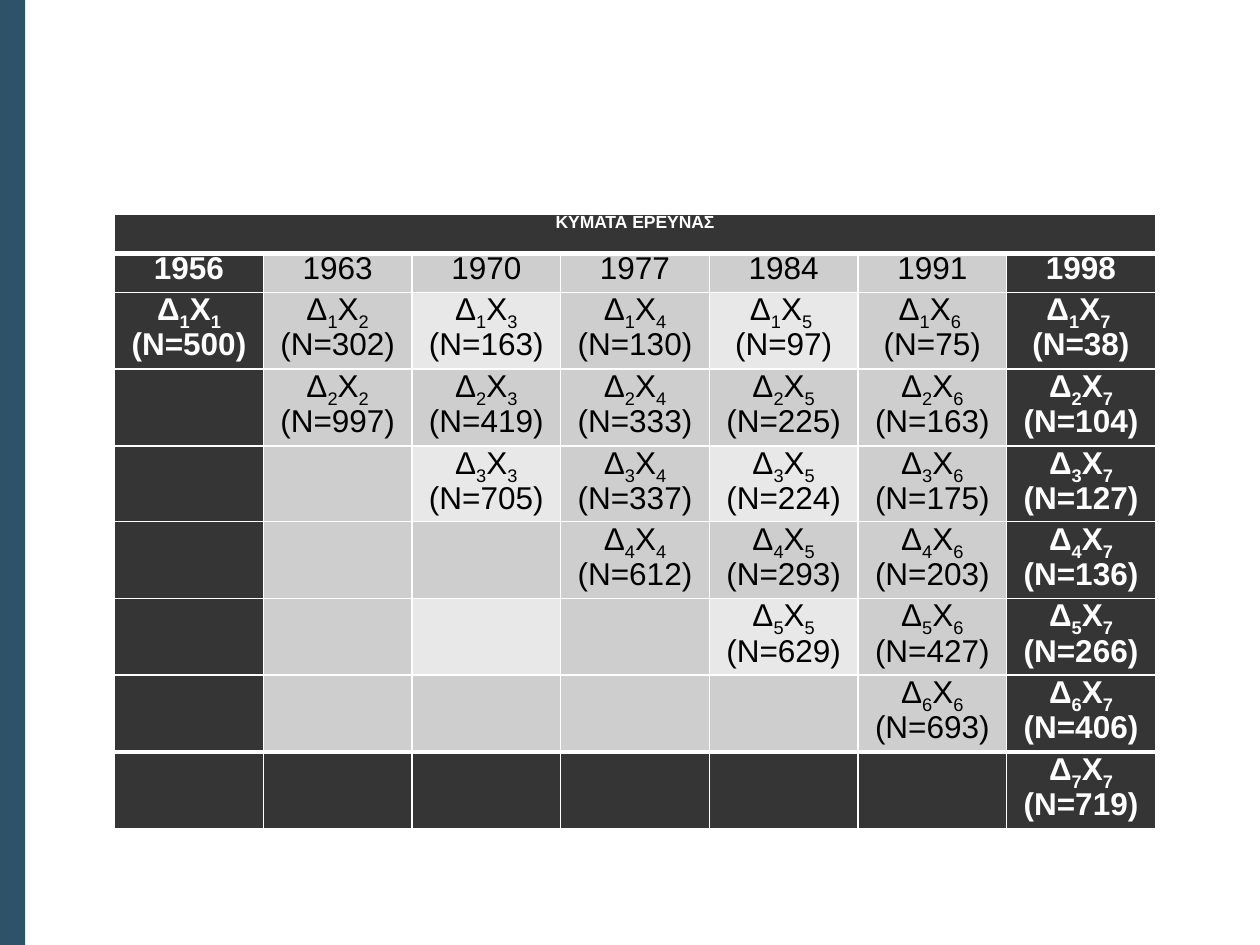
from lxml import etree
from pptx import Presentation
from pptx.dml import color
from pptx.enum import shapes, text
from pptx.oxml import ns
from pptx.util import Inches, Pt

DARK, MEDIUM, LIGHT = "353535", "CECECE", "E8E8E8"
YEARS = [1956, 1963, 1970, 1977, 1984, 1991, 1998]
# One row per sample Δ; sample n first appears in wave n
SAMPLE_SIZES = [
    [500, 302, 163, 130, 97, 75, 38],
    [997, 419, 333, 225, 163, 104],
    [705, 337, 224, 175, 127],
    [612, 293, 203, 136],
    [629, 427, 266],
    [693, 406],
    [719],
]
ROW_HEIGHTS = [0.31, 0.31, 0.61, 0.61, 0.6, 0.61, 0.61, 0.61, 0.61]


def rgb(value):
    return color.RGBColor.from_string(value)


def add_run(paragraph, words, dark, size=18, subscript=False):
    run = paragraph.add_run()
    run.text = words
    run.font.name = "Arial"
    run.font.size = Pt(size)
    run.font.bold = dark
    run.font.color.rgb = rgb("FFFFFF" if dark else "000000")
    if subscript:
        run.font._element.set("baseline", "-25000")


presentation = Presentation()
presentation.slide_width = Inches(10)
presentation.slide_height = Inches(7.5)
slide = presentation.slides.add_slide(presentation.slide_layouts[6])

side_bar = slide.shapes.add_shape(
    shapes.MSO_SHAPE.RECTANGLE, 0, 0, Inches(0.2), Inches(7.5))
side_bar.shadow.inherit = False
side_bar.fill.solid()
side_bar.fill.fore_color.rgb = rgb("2E5369")
side_bar.line.fill.background()

last_row, last_column = len(ROW_HEIGHTS) - 1, len(YEARS) - 1
table = slide.shapes.add_table(
    len(ROW_HEIGHTS), len(YEARS),
    Inches(0.91), Inches(1.7), Inches(8.26), Inches(4.87)).table
for column in table.columns:
    column.width = Inches(1.18)
for row, height in zip(table.rows, ROW_HEIGHTS):
    row.height = Inches(height)
table.cell(0, 0).merge(table.cell(0, last_column))

for row in range(len(ROW_HEIGHTS)):
    for column in range(len(YEARS)):
        cell = table.cell(row, column)
        cell.margin_left = cell.margin_right = Inches(0.08)
        cell.margin_top = cell.margin_bottom = 0

        # Thick rules below the heading and above the last row
        thick_sides = {0: "B", 1: "T", last_row - 1: "B", last_row: "T"}
        properties = cell._tc.get_or_add_tcPr()
        for side in "LRTB":
            width = Pt(3 if thick_sides.get(row) == side else 1)
            border = etree.SubElement(
                properties, ns.qn(f"a:ln{side}"), w=str(width))
            border_fill = etree.SubElement(border, ns.qn("a:solidFill"))
            etree.SubElement(border_fill, ns.qn("a:srgbClr"), val="FFFFFF")

        dark = row in (0, last_row) or column in (0, last_column)
        banded = row in (2, 4, 6) and column in (2, 4)
        cell.fill.solid()
        cell.fill.fore_color.rgb = rgb(
            DARK if dark else LIGHT if banded else MEDIUM)

        paragraph = cell.text_frame.paragraphs[0]
        if row == 0:
            if column == 0:
                add_run(paragraph, "ΚΥΜΑΤΑ ΕΡΕΥΝΑΣ", dark, size=10)
        elif row == 1:
            add_run(paragraph, str(YEARS[column]), dark)
        elif column >= row - 2:
            sample, wave = row - 1, column + 1
            size = SAMPLE_SIZES[sample - 1][wave - sample]
            add_run(paragraph, "Δ", dark)
            add_run(paragraph, str(sample), dark, subscript=True)
            add_run(paragraph, "Χ", dark)
            add_run(paragraph, f"{wave} ", dark, subscript=True)
            if sample == 1 and wave >= 5:
                paragraph = cell.text_frame.add_paragraph()
            add_run(paragraph, f"(Ν={size})", dark)

        for paragraph in cell.text_frame.paragraphs:
            paragraph.alignment = text.PP_ALIGN.CENTER
            paragraph.line_spacing = 0.93
            if row < 2:
                paragraph.space_before = paragraph.space_after = Pt(6)
            if not paragraph.runs:
                paragraph.font.size = Pt(18)

presentation.save("out.pptx")
